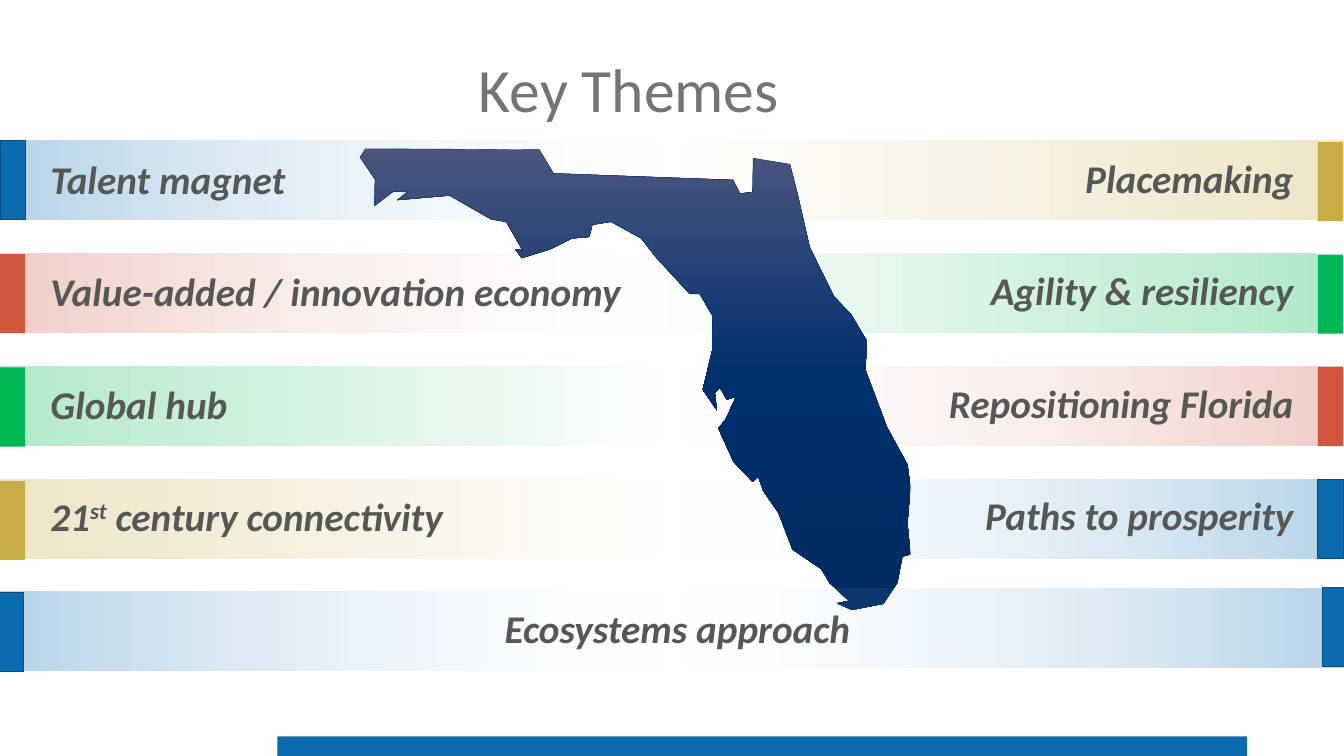
"""Build the Key Themes slide: faded theme bands around a map of Florida."""
from dataclasses import dataclass

import lxml.etree
import pptx
import pptx.dml.color
import pptx.enum.shapes
import pptx.enum.text
import pptx.oxml.ns
import pptx.util

RGB = pptx.dml.color.RGBColor
ALIGN = pptx.enum.text.PP_ALIGN
ANCHOR = pptx.enum.text.MSO_ANCHOR
qn = pptx.oxml.ns.qn

PX = 9144
SLIDE_WIDTH, SLIDE_HEIGHT = 2666, 1500
BAND_WIDTH, TAB_WIDTH, ROW_HEIGHT = 1329, 50, 157
FONT = "Calibri"

BLUE = RGB.from_string("0B6BAF")
PALE_BLUE = RGB.from_string("C2E3FB")
BLUE_EDGE = RGB.from_string("084F81")
RED = RGB.from_string("D1563D")
PALE_RED = RGB.from_string("F6DDD8")
GREEN = RGB.from_string("00B853")
GOLD = RGB.from_string("C7AB45")
NAVY = RGB.from_string("002F6D")
DEEP_NAVY = RGB.from_string("002A61")
SLATE = RGB.from_string("4B557E")
TITLE_GREY = RGB.from_string("737572")
TEXT_GREY = RGB.from_string("565856")


@dataclass(frozen=True)
class Theme:
    """Colours of a band: its tab, its faded end and an optional tab edge."""
    color: RGB
    faded: RGB
    edge: RGB | None = None


@dataclass(frozen=True)
class Stop:
    """A gradient stop, with position and opacity in percent."""
    position: int
    color: RGB
    opacity: int = 100


@dataclass(frozen=True)
class Box:
    """A rectangle in px."""
    left: int
    top: int
    width: int
    height: int

    def emu(self) -> list[int]:
        """Return left, top, width and height in EMU."""
        return [value * PX for value in (self.left, self.top, self.width, self.height)]


BLUE_THEME = Theme(BLUE, PALE_BLUE, BLUE_EDGE)
RED_THEME = Theme(RED, PALE_RED)
GREEN_THEME = Theme(GREEN, GREEN)
GOLD_THEME = Theme(GOLD, GOLD)

LEFT_THEMES = (BLUE_THEME, RED_THEME, GREEN_THEME, GOLD_THEME)
RIGHT_THEMES = LEFT_THEMES[::-1]

LEFT_LABELS = (("Talent magnet",), ("Value-added / innovation economy",),
               ("Global hub",), ("21", "st", " century connectivity"))
RIGHT_LABELS = (("Placemaking",), ("Agility & resiliency",),
                ("Repositioning Florida",), ("Paths to prosperity",))

FLORIDA = (
    (1806, 1100), (1790, 1104), (1780, 1156), (1752, 1198), (1690, 1210), (1661, 1197),
    (1684, 1192), (1646, 1157), (1629, 1129), (1572, 1090), (1544, 1017), (1514, 974),
    (1504, 945), (1493, 956), (1455, 916), (1425, 850), (1440, 831), (1460, 787),
    (1442, 793), (1428, 769), (1418, 780), (1422, 814), (1394, 773), (1414, 690),
    (1413, 626), (1388, 583), (1368, 583), (1300, 509), (1272, 473), (1212, 440),
    (1175, 446), (1169, 470), (1135, 473), (1090, 495), (1035, 512), (1022, 495),
    (1035, 494), (1004, 440), (974, 435), (892, 388), (788, 397), (808, 381),
    (780, 380), (743, 408), (744, 356), (714, 312), (725, 295), (1070, 297),
    (1098, 344), (1454, 357), (1468, 384), (1493, 381), (1494, 314), (1567, 326),
    (1583, 389), (1606, 490), (1654, 588), (1689, 625), (1719, 676), (1717, 735),
    (1759, 847), (1800, 922), (1806, 966), (1800, 1039),
)


def paint_gradient(shape, stops: tuple[Stop, ...], angle: int) -> None:
    """Fill a shape with a linear gradient, its angle counted anticlockwise."""
    shape.fill.gradient()
    shape.fill.gradient_angle = angle
    stop_list = next(shape._element.spPr.iter(qn("a:gsLst")))
    for child in list(stop_list):
        stop_list.remove(child)
    for stop in stops:
        entry = lxml.etree.SubElement(stop_list, qn("a:gs"), pos=str(stop.position * 1000))
        color = lxml.etree.SubElement(entry, qn("a:srgbClr"), val=str(stop.color))
        if stop.opacity < 100:
            lxml.etree.SubElement(color, qn("a:alpha"), val=str(stop.opacity * 1000))


def add_rectangle(slide, box: Box):
    """Add a rectangle without shadow or line."""
    shape = slide.shapes.add_shape(pptx.enum.shapes.MSO_SHAPE.RECTANGLE, *box.emu())
    shape.shadow.inherit = False
    shape.line.fill.background()
    return shape


def add_band(slide, left: int, top: int, theme: Theme, from_right: bool = False) -> None:
    """Add a band that fades towards the middle of the slide."""
    band = add_rectangle(slide, Box(left, top, BAND_WIDTH, ROW_HEIGHT))
    paint_gradient(band, (Stop(1, theme.faded, 0), Stop(100, theme.color, 30)), 180)
    band.rotation = 180 if from_right else 0


def add_tab(slide, left: int, top: int, theme: Theme) -> None:
    """Add the solid tab at the outer end of a band."""
    tab = add_rectangle(slide, Box(left, top, TAB_WIDTH, ROW_HEIGHT))
    tab.fill.solid()
    tab.fill.fore_color.rgb = theme.color
    if theme.edge is not None:
        tab.line.color.rgb = theme.edge
        tab.line.width = pptx.util.Pt(1)


def add_text(slide, box: Box, labels: tuple[tuple[str, ...], ...], align: ALIGN,
             size: int = 56, color: RGB = TEXT_GREY, strong: bool = True,
             anchor: ANCHOR = ANCHOR.TOP) -> None:
    """Add one paragraph per label; the second part of a label is superscript."""
    frame = slide.shapes.add_textbox(*box.emu()).text_frame
    frame.word_wrap = True
    frame.vertical_anchor = anchor
    for index, parts in enumerate(labels):
        para = frame.add_paragraph() if index else frame.paragraphs[0]
        para.alignment = align
        para.line_spacing = 0.9
        para.space_before = pptx.util.Pt(100 if index else 0)
        for position, part in enumerate(parts):
            span = para.add_run()
            span.text = part
            span.font.name = FONT
            span.font.size = pptx.util.Pt(size)
            span.font.bold = span.font.italic = strong
            span.font.color.rgb = color
            if position == 1:
                span._r.get_or_add_rPr().set("baseline", "30000")


def add_florida(slide) -> None:
    """Add the outline of Florida."""
    builder = slide.shapes.build_freeform(*FLORIDA[0], scale=PX)
    builder.add_line_segments(FLORIDA[1:], close=True)
    state = builder.convert_to_shape()
    state.shadow.inherit = False
    paint_gradient(state, (Stop(0, SLATE), Stop(50, NAVY), Stop(100, DEEP_NAVY)), 270)
    state.line.color.rgb = NAVY
    state.line.width = pptx.util.Pt(0.5)


def main() -> None:
    """Build and save the deck."""
    deck = pptx.Presentation()
    deck.slide_width, deck.slide_height = SLIDE_WIDTH * PX, SLIDE_HEIGHT * PX
    slide = deck.slides.add_slide(deck.slide_layouts[6])

    footer = add_rectangle(slide, Box(550, 1461, 1924, 39))
    footer.fill.solid()
    footer.fill.fore_color.rgb = BLUE

    for row, (left_theme, right_theme) in enumerate(zip(LEFT_THEMES, RIGHT_THEMES)):
        right_band_left = 1285 if right_theme is GREEN_THEME else 1337
        add_band(slide, right_band_left, 279 + 224 * row, right_theme, from_right=True)
        add_band(slide, 0, 279 + 224 * row, left_theme)
        add_tab(slide, 0, 279 + 225 * row, left_theme)
        add_tab(slide, 2614, 282 + 223 * row, right_theme)

    add_text(slide, Box(213, 39, 2069, 290), (("Key Themes",),), ALIGN.CENTER,
             size=88, color=TITLE_GREY, strong=False, anchor=ANCHOR.MIDDLE)
    add_text(slide, Box(90, 314, 1180, 952), LEFT_LABELS, ALIGN.LEFT)
    add_text(slide, Box(1522, 312, 1054, 952), RIGHT_LABELS, ALIGN.RIGHT)
    add_florida(slide)

    add_band(slide, 2, 1173, BLUE_THEME)
    add_band(slide, 1336, 1168, BLUE_THEME, from_right=True)
    add_tab(slide, 2623, 1165, BLUE_THEME)
    add_tab(slide, -3, 1176, BLUE_THEME)
    add_text(slide, Box(754, 1204, 1180, 103), (("Ecosystems approach",),), ALIGN.CENTER)
    deck.save("out.pptx")


if __name__ == "__main__":
    main()
